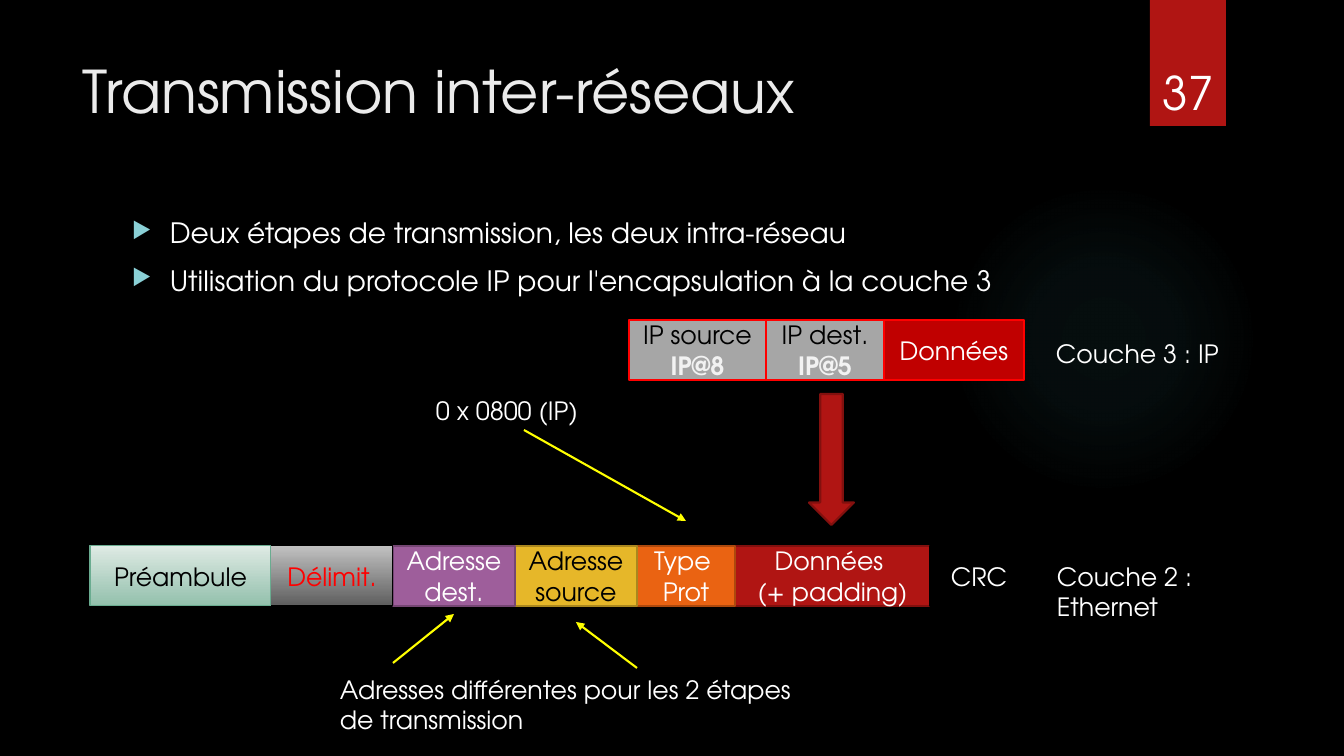
"""Build the slide on transmission between networks."""
from lxml.etree import SubElement as Sub
from pptx import Presentation
from pptx.dml.color import RGBColor as RGB
from pptx.enum.shapes import MSO_CONNECTOR as LINK, MSO_SHAPE as SHAPE
from pptx.enum.text import MSO_ANCHOR as ANCHOR, MSO_AUTO_SIZE as AUTO, PP_ALIGN as ALIGN
from pptx.oxml import parse_xml
from pptx.oxml.ns import nsdecls, qn
from pptx.util import Pt

PX = 914400 / 100.8
FONT = "TeX Gyre Adventor"

BLACK = RGB(0x00, 0x00, 0x00)
WHITE = RGB(0xFF, 0xFF, 0xFF)
PALE = RGB(0xEB, 0xEB, 0xEB)
LIGHT = RGB(0xF2, 0xF2, 0xF2)
GRAY = RGB(0xA6, 0xA6, 0xA6)
SILVER = RGB(0xC1, 0xC1, 0xC1)
SLATE = RGB(0x5E, 0x5E, 0x5E)
MINT = RGB(0xDE, 0xEA, 0xE4)
SAGE = RGB(0x93, 0xC0, 0xAC)
GREEN = RGB(0x6A, 0xAC, 0x90)
PURPLE = RGB(0x9E, 0x5E, 0x9B)
PLUM = RGB(0x75, 0x46, 0x73)
GOLD = RGB(0xE6, 0xB7, 0x29)
BRONZE = RGB(0xAA, 0x87, 0x1E)
ORANGE = RGB(0xEA, 0x63, 0x12)
RUST = RGB(0xAD, 0x49, 0x0D)
CRIMSON = RGB(0xB0, 0x15, 0x13)
MAROON = RGB(0x82, 0x10, 0x0E)
RUBY = RGB(0xC0, 0x00, 0x00)
RED = RGB(0xFF, 0x00, 0x00)
YELLOW = RGB(0xFF, 0xFF, 0x00)
AQUA = RGB(0x8A, 0xD0, 0xD6)
TEAL = RGB(0x50, 0xB9, 0xC1)

FRAME = [
    ("Préambule", 181, (MINT, SAGE), GREEN, BLACK),
    ("Délimit.", 122, (SILVER, SLATE), BLACK, RED),
    ("Adresse dest.", 122, (PURPLE,), PLUM, WHITE),
    ("Adresse source", 122, (GOLD,), BRONZE, BLACK),
    ("Type \nProt", 98, (ORANGE,), RUST, WHITE),
    ("Données \n(+ padding)", 195, (CRIMSON,), MAROON, WHITE),
]
PACKET = [
    ("IP source\nIP@8", 137, (GRAY,), RED, BLACK),
    ("IP dest.\nIP@5", 118, (GRAY,), RED, BLACK),
    ("Données", 140, (RUBY,), RED, WHITE),
]
CRC = [("CRC", 98, (BLACK,), BLACK, WHITE)]


def emu(*sizes):
    """Turn pixels into EMU."""
    return [round(size * PX) for size in sizes]


def style(para, size, color, bold=False):
    """Format the runs of a paragraph."""
    for run in para.runs:
        font = run.font
        font.name, font.size, font.bold = FONT, Pt(size), bold
        font.color.rgb = color


def label(slide, box, text, size=18):
    """Add a plain text box."""
    frame = slide.shapes.add_textbox(*emu(*box)).text_frame
    frame.word_wrap = True
    frame.text = text
    for para in frame.paragraphs:
        style(para, size, WHITE)
    return frame


def block(slide, kind, box, fills, edge=None, width=1.5):
    """Add a shape with a plain or a two-tone fill."""
    shape = slide.shapes.add_shape(kind, *emu(*box))
    shape.shadow.inherit = False
    if len(fills) == 1:
        shape.fill.solid()
        shape.fill.fore_color.rgb = fills[0]
    else:
        shape.fill.gradient()
        shape.fill.gradient_angle = 270
        for stop, color in zip(shape.fill.gradient_stops, fills):
            stop.color.rgb = color
    if edge is None:
        shape.line.fill.background()
    else:
        shape.line.color.rgb = edge
        shape.line.width = Pt(width)
    return shape


def strip(slide, left, top, cells):
    """Lay cells side by side, with the left ones in front."""
    right = left + sum(cell[1] for cell in cells)
    for text, wide, fills, edge, ink in reversed(cells):
        right -= wide
        width = 1.5 if len(fills) == 1 else 0.75
        shape = block(slide, SHAPE.RECTANGLE, (right, top, wide, 60), fills, edge, width)
        frame = shape.text_frame
        frame.text = text
        frame.vertical_anchor = ANCHOR.MIDDLE
        for para in frame.paragraphs:
            para.alignment = ALIGN.CENTER
            host = para.text.startswith("IP@")
            style(para, 18, LIGHT if host else ink, host)


def glow(slide, box):
    """Add a faint round light."""
    shape = block(slide, SHAPE.OVAL, box, (TEAL,))
    stops = "".join(
        f'<a:gs pos="{pos}000"><a:srgbClr val="{TEAL}"><a:alpha val="{alpha}000"/></a:srgbClr></a:gs>'
        for pos, alpha in ((0, 7), (36, 6), (69, 0), (100, 0)))
    fill = parse_xml(
        f'<a:gradFill {nsdecls("a")}><a:gsLst>{stops}</a:gsLst><a:path path="circle">'
        '<a:fillToRect l="50000" t="50000" r="50000" b="50000"/></a:path></a:gradFill>')
    props = shape._element.spPr
    props.replace(props.find(qn("a:solidFill")), fill)


def arrow(slide, start, end):
    """Draw a yellow arrow."""
    link = slide.shapes.add_connector(LINK.STRAIGHT, *emu(*start, *end))
    link.line.color.rgb = YELLOW
    link.line.width = Pt(1.5)
    Sub(link.line._get_or_add_ln(), qn("a:tailEnd"), type="triangle")
    Sub(link._element.spPr, qn("a:effectLst"))


def title(slide, box, text):
    """Place and format the title."""
    shape = slide.shapes.title
    shape.left, shape.top, shape.width, shape.height = emu(*box)
    frame = shape.text_frame
    frame.text = text
    frame.auto_size = AUTO.NONE
    frame.vertical_anchor = ANCHOR.TOP
    frame.paragraphs[0].alignment = ALIGN.LEFT
    style(frame.paragraphs[0], 42, PALE)


def points(slide, box, lines):
    """Add a bulleted list."""
    frame = label(slide, box, "\n".join(lines), 20)
    for index, para in enumerate(frame.paragraphs):
        props = para._p.get_or_add_pPr()
        indent = emu(38)[0]
        props.set("marL", str(indent))
        props.set("indent", str(-indent))
        Sub(Sub(props, qn("a:buClr")), qn("a:srgbClr"), val=str(AQUA))
        Sub(props, qn("a:buSzPct"), val="80000")
        Sub(props, qn("a:buChar"), char="▶")
        if index:
            para.space_before = Pt(10)


def main():
    """Build and save the slide."""
    deck = Presentation()
    deck.slide_width, deck.slide_height = emu(1344, 756)
    slide = deck.slides.add_slide(deck.slide_layouts[5])
    slide.background.fill.solid()
    slide.background.fill.fore_color.rgb = BLACK

    glow(slide, (949, 184, 310, 310))
    block(slide, SHAPE.RECTANGLE, (1150, 0, 76, 126), (CRIMSON,))
    title(slide, (72, 50, 1037, 154), "Transmission inter-réseaux")
    label(slide, (1153, 59, 79, 67), "37", 33)
    points(slide, (122, 211, 986, 463), [
        "Deux étapes de transmission, les deux intra-réseau",
        "Utilisation du protocole IP pour l'encapsulation à la couche 3",
    ])

    strip(slide, 90, 546, FRAME)
    strip(slide, 930, 546, CRC)
    strip(slide, 629, 320, PACKET)
    block(slide, SHAPE.DOWN_ARROW, (809, 394, 45, 131), (CRIMSON,), MAROON)

    label(slide, (1047, 556, 275, 72), "Couche 2 :\nEthernet")
    label(slide, (1046, 333, 275, 40), "Couche 3 : IP")
    label(slide, (426, 390, 275, 40), "0 x 0800 (IP)")
    label(slide, (330, 669, 504, 72), "Adresses différentes pour les 2 étapes de transmission")
    arrow(slide, (524, 430), (686, 521))
    arrow(slide, (393, 663), (454, 614))
    arrow(slide, (637, 668), (576, 622))
    deck.save("out.pptx")


if __name__ == "__main__":
    main()
